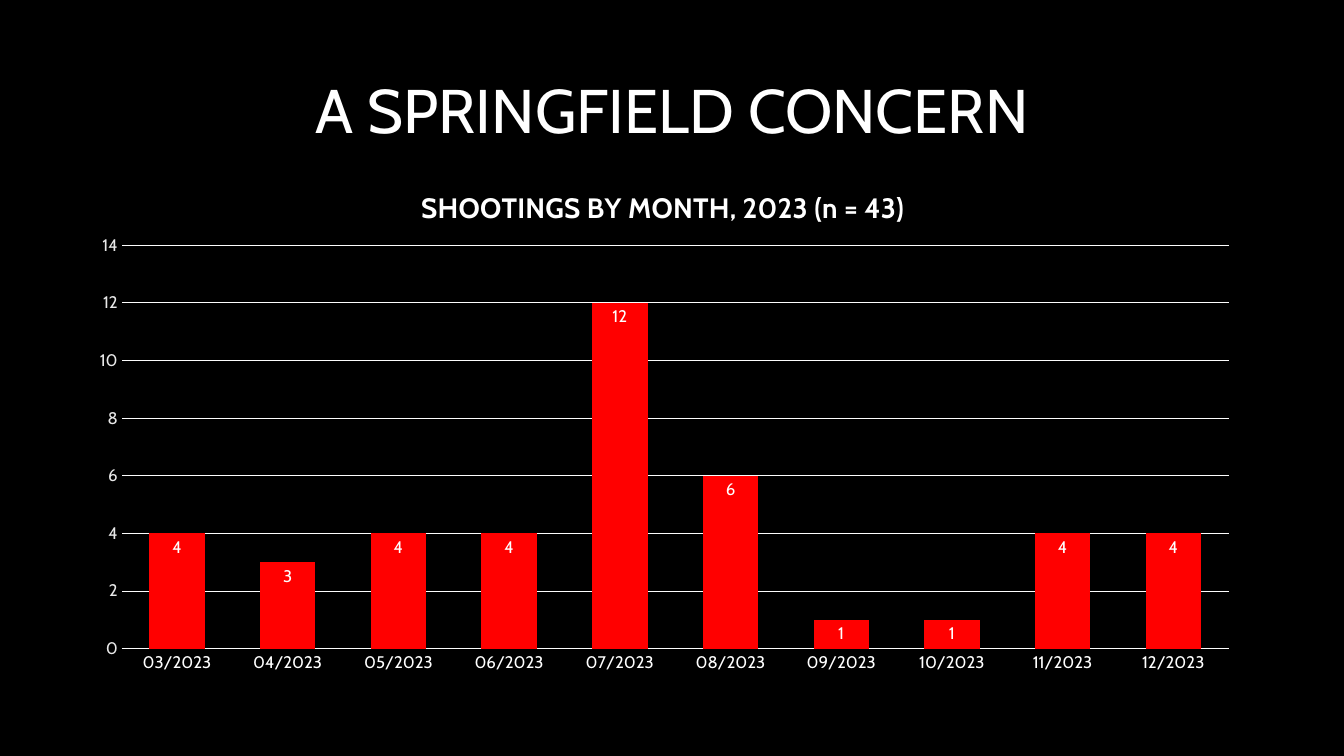
import pptx
import pptx.chart.data
import pptx.dml.color
import pptx.enum.chart
import pptx.enum.text
import pptx.oxml
import pptx.oxml.ns
import pptx.util
from pptx.util import Inches

RGBColor = pptx.dml.color.RGBColor
BLACK = RGBColor(0x00, 0x00, 0x00)
WHITE = RGBColor(0xFF, 0xFF, 0xFF)
RED = RGBColor(0xFF, 0x00, 0x00)
LINE_WHITE = RGBColor(0xFC, 0xFC, 0xFC)
LIGHT_GRAY = RGBColor(0xE8, 0xE8, 0xE8)

FONT = "Cabin"
SHOOTINGS = [4, 3, 4, 4, 12, 6, 1, 1, 4, 4]
MONTHS = [f"{month:02d}/2023" for month in range(3, 13)]


def set_values(target, values):
    for name, value in values.items():
        setattr(target, name, value)


def style_font(font, size, color, bold=False):
    set_values(font, {"name": FONT, "size": pptx.util.Pt(size), "bold": bold})
    font.color.rgb = color


def style_line(line, color):
    line.color.rgb = color
    line.width = pptx.util.Pt(0.75)


def place_in_chart(element, index, places, inner=False):
    """Give a chart part a fixed place, in fractions of the chart's size."""
    qn = pptx.oxml.ns.qn
    for old_layout in element.findall(qn("c:layout")):
        element.remove(old_layout)
    target = '<c:layoutTarget val="inner"/>' if inner else ""
    modes = "".join(f'<c:{key}Mode val="edge"/>' for key in ("x", "y"))
    sizes = "".join(f'<c:{key} val="{value}"/>' for key, value in places.items())
    layout = pptx.oxml.parse_xml(
        f'<c:layout {pptx.oxml.ns.nsdecls("c")}><c:manualLayout>'
        f"{target}{modes}{sizes}</c:manualLayout></c:layout>"
    )
    element.insert(index, layout)


def add_title(page, text):
    title = page.shapes.title
    set_values(title, {"left": Inches(0.92), "top": Inches(0.4),
                       "width": Inches(11.5), "height": Inches(1.45)})
    frame = title.text_frame
    set_values(frame, {"text": text, "word_wrap": True,
                       "vertical_anchor": pptx.enum.text.MSO_ANCHOR.MIDDLE})
    para = frame.paragraphs[0]
    set_values(para, {"alignment": pptx.enum.text.PP_ALIGN.CENTER, "line_spacing": 0.9})
    style_font(para.runs[0].font, 44, WHITE)


def style_axis(axis, color):
    axis.major_tick_mark = pptx.enum.chart.XL_TICK_MARK.NONE
    axis.minor_tick_mark = pptx.enum.chart.XL_TICK_MARK.NONE
    style_font(axis.tick_labels.font, 12, color)


def add_chart_title(chart, text):
    chart.has_title = True
    frame = chart.chart_title.text_frame
    frame.text = text
    style_font(frame.paragraphs[0].runs[0].font, 20, WHITE, bold=True)
    place_in_chart(chart.chart_title._element, 1, {"x": 0.29, "y": 0.05})


def add_month_chart(page):
    chart_data = pptx.chart.data.CategoryChartData()
    chart_data.categories = MONTHS
    chart_data.add_series("Series 1", SHOOTINGS)
    chart = page.shapes.add_chart(
        pptx.enum.chart.XL_CHART_TYPE.COLUMN_CLUSTERED,
        Inches(0.74), Inches(1.55), Inches(11.68), Inches(5.2), chart_data,
    ).chart
    chart.has_legend = False
    style_font(chart.font, 10, WHITE)
    add_chart_title(chart, "SHOOTINGS BY MONTH, 2023 (n = 43)")

    style_axis(chart.category_axis, WHITE)
    style_line(chart.category_axis.format.line, LINE_WHITE)
    value_axis = chart.value_axis
    style_axis(value_axis, LIGHT_GRAY)
    set_values(value_axis, {"minimum_scale": 0, "maximum_scale": 14, "major_unit": 2})
    value_axis.format.line.fill.background()
    style_line(value_axis.major_gridlines.format.line, LINE_WHITE)

    plot = chart.plots[0]
    set_values(plot, {"gap_width": 100, "overlap": -24, "vary_by_categories": False})
    series = plot.series[0]
    series.format.fill.solid()
    series.format.fill.fore_color.rgb = RED
    labels = series.data_labels
    set_values(labels, {"show_value": True,
                        "position": pptx.enum.chart.XL_LABEL_POSITION.INSIDE_END})
    style_font(labels.font, 12, WHITE)
    plot_area = chart._chartSpace.chart.plotArea
    place_in_chart(plot_area, 0, {"x": 0.04, "y": 0.17, "w": 0.94, "h": 0.77}, inner=True)


def main():
    deck = pptx.Presentation()
    set_values(deck, {"slide_width": Inches(13.33), "slide_height": Inches(7.5)})
    page = deck.slides.add_slide(deck.slide_layouts.get_by_name("Title Only"))
    page.background.fill.solid()
    page.background.fill.fore_color.rgb = BLACK
    add_title(page, "A SPRINGFIELD CONCERN")
    add_month_chart(page)
    deck.save("out.pptx")


if __name__ == "__main__":
    main()
